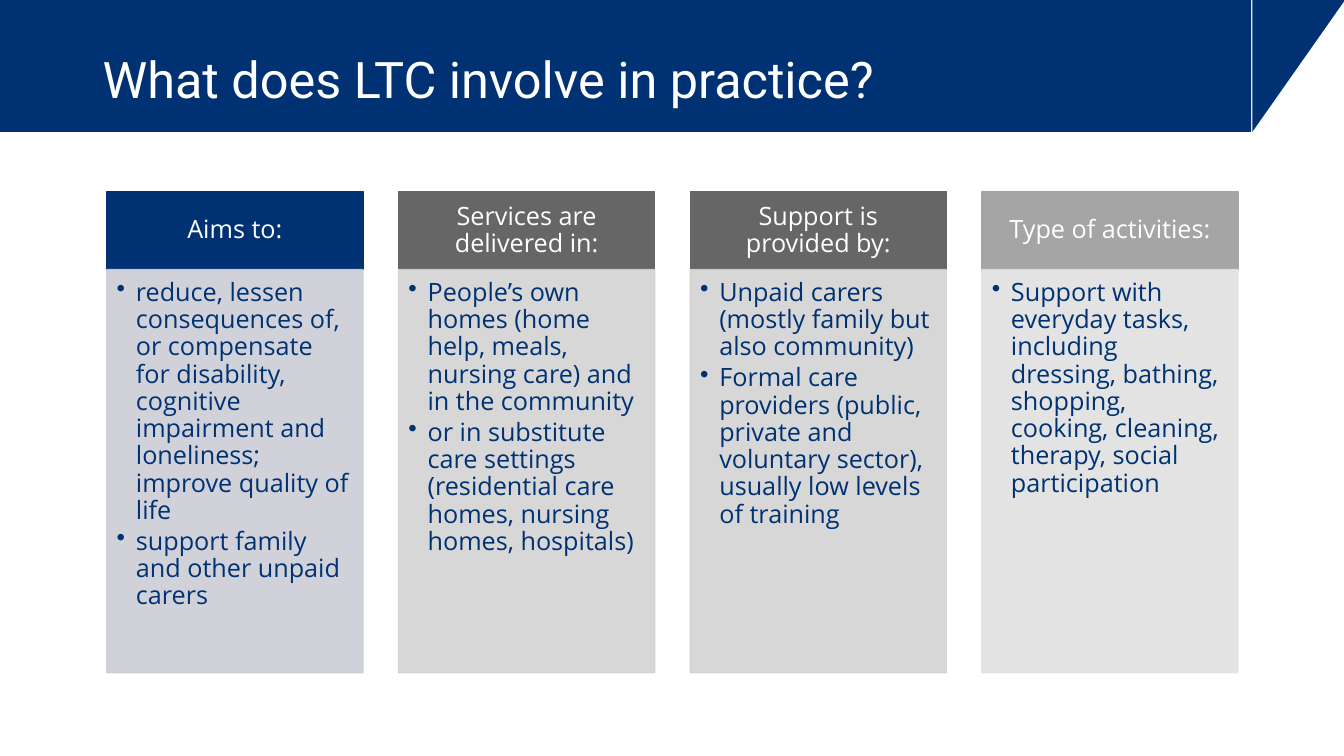
"""Builds the slide on what long-term care involves in practice."""
from dataclasses import dataclass

from lxml import etree
from pptx import Presentation
from pptx.dml.color import RGBColor
from pptx.enum.shapes import MSO_SHAPE
from pptx.enum.text import MSO_ANCHOR, PP_ALIGN
from pptx.oxml.ns import qn
from pptx.util import Inches, Pt

RECTANGLE, TRIANGLE = MSO_SHAPE.RECTANGLE, MSO_SHAPE.RIGHT_TRIANGLE
TOP, MIDDLE = MSO_ANCHOR.TOP, MSO_ANCHOR.MIDDLE
LEFT, CENTER = PP_ALIGN.LEFT, PP_ALIGN.CENTER


@dataclass(frozen=True)
class Theme:
    navy: str = "003273"
    white: str = "FFFFFF"
    title_font: str = "Roboto"
    body_font: str = "Open Sans"
    title_size: int = 36
    body_size: int = 18
    line_spacing: float = 0.9
    bullet_indent: float = 0.19
    panel_opacity: int = 90


THEME = Theme()
TITLE = "What does LTC involve in practice?"
TOPICS = [
    ("Aims to:", THEME.navy, "CCCED5", [
        "reduce, lessen consequences of, or compensate for disability, cognitive "
        "impairment and loneliness; improve quality of life",
        "support family and other unpaid carers"]),
    ("Services are delivered in:", "666666", "D3D3D3", [
        "People’s own homes (home help, meals, nursing care) and in the community",
        "or in substitute care settings (residential care homes, nursing homes, hospitals)"]),
    ("Support is provided by:", "666666", "D3D3D3", [
        "Unpaid carers (mostly family but also community)",
        "Formal care providers (public, private and voluntary sector), "
        "usually low levels of training"]),
    ("Type of activities:", "A5A5A5", "E1E1E1", [
        "Support with everyday tasks, including dressing, bathing, shopping, "
        "cooking, cleaning, therapy, social participation"]),
]

SLIDE_W, SLIDE_H = 13.33, 7.5
BANNER_W, BANNER_H = 12.41, 1.31
CORNER_LEFT, CORNER_W = 12.42, 0.92
GRID_LEFT, GRID_TOP = 1.06, 1.9
COLUMN_W, COLUMN_STEP = 2.54, 2.893
HEADING_H, PANEL_H = 0.775, 4


def add_block(slide, box, color, kind=RECTANGLE, opacity=100, outlined=False):
    block = slide.shapes.add_shape(kind, *map(Inches, box))
    block.shadow.inherit = False
    block.fill.solid()
    block.fill.fore_color.rgb = RGBColor.from_string(color)
    if outlined:
        block.line.color.rgb = RGBColor.from_string(color)
        block.line.width = Pt(1)
    else:
        block.line.fill.background()
    if opacity < 100:
        for tint in block._element.spPr.iter(qn("a:srgbClr")):
            etree.SubElement(tint, qn("a:alpha"), val=str(opacity * 1000))
    return block


def write(holder, paragraphs, *, size=THEME.body_size, font=THEME.body_font,
          color=THEME.white, align=LEFT, anchor=TOP, insets=(0.1, 0.05, 0.1, 0.05),
          bulleted=False):
    frame = holder.text_frame
    frame.word_wrap = True
    frame.vertical_anchor = anchor
    (frame.margin_left, frame.margin_top,
     frame.margin_right, frame.margin_bottom) = map(Inches, insets)
    for index, text in enumerate(paragraphs):
        paragraph = frame.paragraphs[0] if index == 0 else frame.add_paragraph()
        paragraph.alignment = align
        paragraph.line_spacing = THEME.line_spacing
        if bulleted:
            paragraph.space_after = Pt(0.15 * size)
            properties = paragraph._p.get_or_add_pPr()
            indent = Inches(THEME.bullet_indent)
            properties.set("marL", str(indent))
            properties.set("indent", str(-indent))
            etree.SubElement(properties, qn("a:buChar"), char="•")
        run = paragraph.add_run()
        run.text = text
        run.font.size = Pt(size)
        run.font.name = font
        run.font.color.rgb = RGBColor.from_string(color)


def add_banner(slide):
    corner = add_block(slide, (CORNER_LEFT, 0, CORNER_W, BANNER_H), THEME.navy, TRIANGLE)
    corner._element.spPr.xfrm.set("flipV", "1")
    add_block(slide, (0, 0, BANNER_W, BANNER_H), THEME.navy)
    title = slide.shapes.add_textbox(*map(Inches, (0.92, 0.4, 11.5, 0.84)))
    write(title, [TITLE], size=THEME.title_size, font=THEME.title_font, anchor=MIDDLE)


def add_topic(slide, column, heading, heading_color, panel_color, points):
    left = GRID_LEFT + column * COLUMN_STEP
    header = add_block(slide, (left, GRID_TOP, COLUMN_W, HEADING_H),
                       heading_color, outlined=True)
    write(header, [heading], align=CENTER, anchor=MIDDLE, insets=(0.14, 0.08, 0.14, 0.08))
    panel = add_block(slide, (left, GRID_TOP + HEADING_H, COLUMN_W, PANEL_H),
                      panel_color, opacity=THEME.panel_opacity, outlined=True)
    write(panel, points, color=THEME.navy, insets=(0.1, 0.1, 0.14, 0.16), bulleted=True)


def main():
    deck = Presentation()
    deck.slide_width, deck.slide_height = Inches(SLIDE_W), Inches(SLIDE_H)
    slide = deck.slides.add_slide(deck.slide_layouts[6])
    add_banner(slide)
    for column, topic in enumerate(TOPICS):
        add_topic(slide, column, *topic)
    deck.save("out.pptx")


if __name__ == "__main__":
    main()
